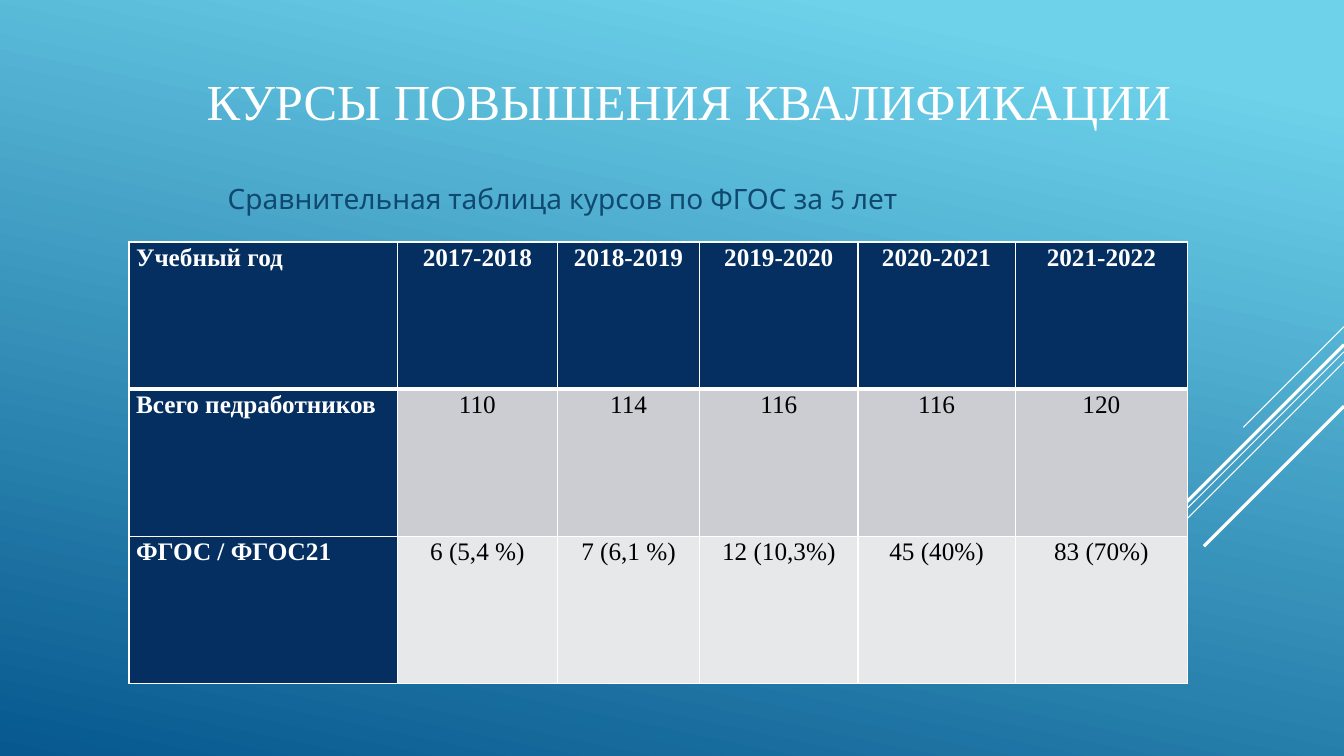
from dataclasses import dataclass

import pptx
import pptx.dml.color
import pptx.enum.shapes
import pptx.enum.text
import pptx.oxml
import pptx.oxml.ns
import pptx.util

Inches = pptx.util.Inches
Pt = pptx.util.Pt
RGBColor = pptx.dml.color.RGBColor
ALIGN = pptx.enum.text.PP_ALIGN
ANCHOR = pptx.enum.text.MSO_ANCHOR

WHITE = RGBColor(0xFF, 0xFF, 0xFF)
BLACK = RGBColor(0x00, 0x00, 0x00)
SKY = RGBColor(0x6E, 0xD2, 0xEB)
OCEAN = RGBColor(0x06, 0x58, 0x8E)
TEAL = RGBColor(0x0F, 0x49, 0x6F)
NAVY = RGBColor(0x05, 0x2F, 0x61)
GREY = RGBColor(0xCC, 0xCD, 0xD2)
LIGHT_GREY = RGBColor(0xE7, 0xE8, 0xEA)

SERIF = "Times New Roman"
SLIDE_W = 13.33


@dataclass
class Ray:
    """A 45-degree line falling to the left from the right slide edge."""
    top: float
    run: float
    weight: float


@dataclass
class Label:
    text: str
    box: tuple[float, float, float, float]
    frame: dict
    align: ALIGN
    font: dict
    color: RGBColor


RAYS = [
    Ray(3.24, 1.0, 0.75),
    Ray(3.49, 3.26, 0.75),
    Ray(3.59, 2.07, 0.75),
    Ray(3.42, 1.91, 2.25),
    Ray(4.03, 1.39, 2.25),
]

LABELS = [
    Label("КУРСЫ ПОВЫШЕНИЯ КВАЛИФИКАЦИИ", (0.51, 0.17, 12.65, 1.65),
          {"word_wrap": True, "vertical_anchor": ANCHOR.MIDDLE},
          ALIGN.CENTER, {"name": SERIF, "size": Pt(36)}, WHITE),
    Label("Сравнительная таблица курсов по ФГОС за 5 лет", (2.16, 1.78, 9.33, 1.31),
          {"word_wrap": True, "vertical_anchor": ANCHOR.TOP, "margin_top": Inches(0.02)},
          ALIGN.LEFT, {"name": "League Spartan", "size": Pt(20)}, TEAL),
]

COLUMN_WIDTHS = [2.66, 1.59, 1.41, 1.57, 1.56, 1.71]
ROW_HEIGHT = 1.46
ROW_FILLS = [NAVY, GREY, LIGHT_GREY]
ROWS = [
    ["Учебный год", "2017-2018", "2018-2019", "2019-2020", "2020-2021", "2021-2022"],
    ["Всего педработников", "110", "114", "116", "116", "120"],
    ["ФГОС / ФГОС21", "6 (5,4 %)", "7 (6,1 %)", "12 (10,3%)", "45 (40%)", "83 (70%)"],
]
CELL_FORMAT = {"margin_left": Inches(0.07), "margin_right": Inches(0.07),
               "margin_top": 0, "margin_bottom": 0}


def set_attributes(target: object, values: dict) -> None:
    for name, value in values.items():
        setattr(target, name, value)


def write(p, text: str, align: ALIGN, font: dict, color: RGBColor) -> None:
    p.alignment = align
    r = p.add_run()
    r.text = text
    set_attributes(r.font, font)
    r.font.color.rgb = color


def paint_background(s) -> None:
    fill = s.background.fill
    fill.gradient()
    fill.gradient_angle = 258
    for stop, position, color in zip(fill.gradient_stops, (0.1, 1.0), (SKY, OCEAN)):
        stop.position = position
        stop.color.rgb = color


def add_ray(s, ray: Ray) -> None:
    line = s.shapes.add_connector(
        pptx.enum.shapes.MSO_CONNECTOR.STRAIGHT,
        Inches(SLIDE_W), Inches(ray.top),
        Inches(SLIDE_W - ray.run), Inches(ray.top + ray.run))
    line.line.color.rgb = WHITE
    line.line.width = Pt(ray.weight)
    line._element.spPr.append(pptx.oxml.parse_xml(
        f"<a:effectLst {pptx.oxml.ns.nsdecls('a')}/>"))


def add_label(s, label: Label) -> None:
    sp = s.shapes.add_textbox(*map(Inches, label.box))
    tf = sp.text_frame
    set_attributes(tf, label.frame)
    write(tf.paragraphs[0], label.text, label.align, label.font, label.color)


def add_borders(cell, top: float, bottom: float) -> None:
    """Draw white borders, with the top and bottom weights in points."""
    tc_pr = cell._tc.get_or_add_tcPr()
    for side, weight in (("L", 1), ("R", 1), ("T", top), ("B", bottom)):
        tc_pr.append(pptx.oxml.parse_xml(
            f'<a:ln{side} {pptx.oxml.ns.nsdecls("a")} w="{Pt(weight)}">'
            f'<a:solidFill><a:srgbClr val="{WHITE}"/></a:solidFill></a:ln{side}>'))


def add_course_table(s) -> None:
    table = s.shapes.add_table(
        len(ROWS), len(COLUMN_WIDTHS), Inches(1.28), Inches(2.4),
        Inches(sum(COLUMN_WIDTHS)), Inches(ROW_HEIGHT * len(ROWS))).table
    for column, width in zip(table.columns, COLUMN_WIDTHS):
        column.width = Inches(width)
    for i, texts in enumerate(ROWS):
        table.rows[i].height = Inches(ROW_HEIGHT)
        for j, text in enumerate(texts):
            cell = table.cell(i, j)
            heading = i == 0 or j == 0
            set_attributes(cell, CELL_FORMAT)
            add_borders(cell, 3 if i == 1 else 1, 3 if i == 0 else 1)
            cell.fill.solid()
            cell.fill.fore_color.rgb = NAVY if heading else ROW_FILLS[i]
            p = cell.text_frame.paragraphs[0]
            p.line_spacing = 1.07
            write(p, text, ALIGN.JUSTIFY if j == 0 else ALIGN.CENTER,
                  {"name": SERIF, "size": Pt(18), "bold": heading},
                  WHITE if heading else BLACK)


def main() -> None:
    prs = pptx.Presentation()
    prs.slide_width = Inches(SLIDE_W)
    prs.slide_height = Inches(7.5)
    s = prs.slides.add_slide(prs.slide_layouts[6])
    paint_background(s)
    for ray in RAYS:
        add_ray(s, ray)
    for label in LABELS:
        add_label(s, label)
    add_course_table(s)
    prs.save("out.pptx")


if __name__ == "__main__":
    main()
